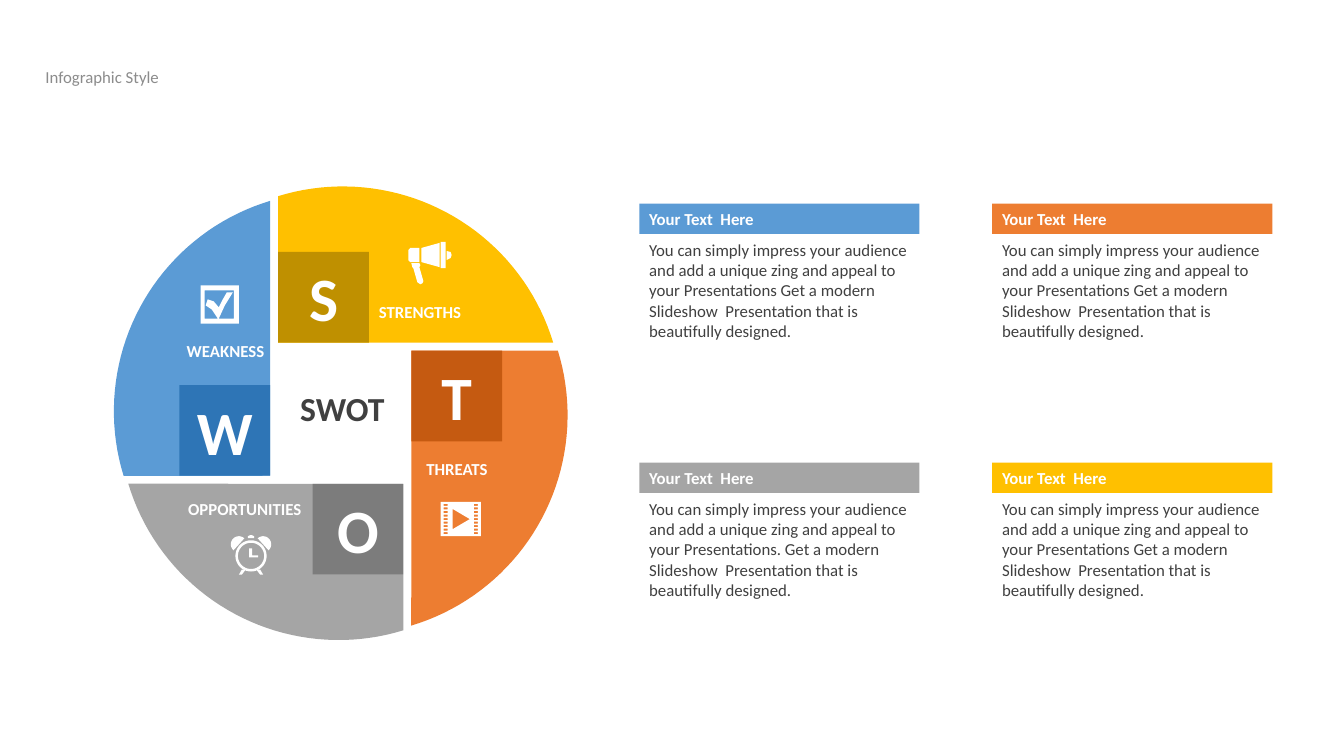
import math
from pptx import Presentation
from pptx import util as u
from pptx.dml.color import RGBColor
from pptx.enum import shapes, text

PX = 9144
FONT = "Calibri"
WHITE = RGBColor(0xFF, 0xFF, 0xFF)
INK = RGBColor(0x40, 0x40, 0x40)
MUTED = RGBColor(0x8C, 0x8C, 0x8C)
BLUE = RGBColor(0x5B, 0x9B, 0xD5)
ORANGE = RGBColor(0xED, 0x7D, 0x31)
GRAY = RGBColor(0xA5, 0xA5, 0xA5)
GOLD = RGBColor(0xFF, 0xC0, 0x00)
DARK_BLUE = RGBColor(0x2E, 0x75, 0xB6)
DARK_ORANGE = RGBColor(0xC5, 0x5A, 0x11)
DARK_GRAY = RGBColor(0x7C, 0x7C, 0x7C)
DARK_GOLD = RGBColor(0xBF, 0x90, 0x00)
LEFT, CENTER, RIGHT = text.PP_ALIGN.LEFT, text.PP_ALIGN.CENTER, text.PP_ALIGN.RIGHT
TOP, MIDDLE = text.MSO_ANCHOR.TOP, text.MSO_ANCHOR.MIDDLE


def px(value):
    return u.Emu(round(value * PX))


def write(shape, words, size, color, bold=False, align=LEFT, anchor=TOP):
    frame = shape.text_frame
    frame.word_wrap = True
    frame.auto_size = text.MSO_AUTO_SIZE.NONE
    frame.vertical_anchor = anchor
    paragraph = frame.paragraphs[0]
    paragraph.alignment = align
    run = paragraph.add_run()
    run.text = words
    run.font.name = FONT
    run.font.size = u.Pt(size)
    run.font.bold = bold
    run.font.color.rgb = color


def label(slide, box, words, size, color, **style):
    write(slide.shapes.add_textbox(*map(px, box)), words, size, color, **style)


def paint(shape, color):
    shape.shadow.inherit = False
    shape.fill.solid()
    shape.fill.fore_color.rgb = color
    shape.line.fill.background()


def block(slide, box, color):
    shape = slide.shapes.add_shape(shapes.MSO_SHAPE.RECTANGLE, *map(px, box))
    paint(shape, color)
    return shape


def outline(slide, left, top, contours, color):
    placed = [[(px(left + x), px(top + y)) for x, y in points] for points in contours]
    builder = slide.shapes.build_freeform(*placed[0][0])
    builder.add_line_segments(placed[0][1:])
    for points in placed[1:]:
        builder.move_to(*points[0])
        builder.add_line_segments(points[1:])
    paint(builder.convert_to_shape(), color)


def arc(cx, cy, radius, start, end, steps=40):
    angles = [math.radians(start + (end - start) * i / steps) for i in range(steps + 1)]
    return [(cx + radius * math.cos(a), cy + radius * math.sin(a)) for a in angles]


def rect(x, y, width, height):
    return [(x, y), (x + width, y), (x + width, y + height), (x, y + height)]


def turn(point, quarters):
    x, y = point
    for _ in range(quarters):
        x, y = -y, x
    return x, y


def megaphone(slide, left, top):
    handle = [(3, 21), (11, 21), (12, 23), (11, 25), (15, 39), (14, 41),
              (12, 42), (9, 40), (5, 26), (4, 25)]
    grip = [(2, 6), (11, 6), (11, 20), (2, 20), (0, 18), (0, 8)]
    cone = [(31, 1), (31, 25), (13, 20), (13, 6)]
    knob = [(38, 9), (42, 10), (43, 13), (42, 16), (38, 18)]
    outline(slide, left, top, [handle, grip, cone, rect(32, 0, 5, 26), knob], WHITE)


def film(slide, left, top):
    holes = [rect(x, 2 + 3.5 * row, 4, 2) for row in range(9) for x in (3, 33)]
    play = [(12, 7), (12, 27), (29, 17)]
    outline(slide, left, top, [rect(0, 0, 40, 34), play, *holes], WHITE)


def alarm_clock(slide, left, top):
    rim, face = arc(20, 20.5, 15.5, 0, 360), arc(20, 20.5, 13, 0, 360)
    hands = [(18, 13), (21, 13), (21, 20), (27, 20), (27, 22), (18, 22)]
    button = [(17, 3), (17, 1), (19, 0), (21, 0), (23, 1), (23, 3)]
    sides = [arc(8, 9, 8, 132, 312), [(11, 34), (14, 35), (11, 39), (8, 39)]]
    mirrored = [[(40 - x, y) for x, y in points] for points in sides]
    outline(slide, left, top, [rim, face, hands, button, *sides, *mirrored], WHITE)


def checkbox(slide, left, top):
    tick = [(5, 20), (7, 14), (13, 16), (18, 22), (22, 14), (26, 7), (32, 7),
            (24, 20), (18, 33), (17, 33), (11, 24)]
    outline(slide, left, top, [rect(0, 0, 38, 38), rect(4, 5, 29, 28), tick], WHITE)


def heading(slide, left, top, width, height):
    title = slide.shapes.title
    title.left, title.top, title.width, title.height = map(px, (left, top, width, height))
    write(title, "Infographic Style", 12, MUTED, anchor=MIDDLE)


def swot_wheel(slide, left, top, size):
    cx, cy = left + size / 2, top + size / 2
    tile = 90
    corner = (-62, -70)
    start = math.degrees(math.atan2(-208, -64))
    end = math.degrees(math.atan2(-63, 209))
    sector = [corner, *arc(2, -7, 218, start, end)]
    tile_center = (corner[0] + tile / 2, corner[1] - tile / 2)
    quadrants = [
        ("S", "STRENGTHS", GOLD, DARK_GOLD, (28, -116), LEFT, megaphone, (67, -170)),
        ("T", "THREATS", ORANGE, DARK_ORANGE, (75, 40), LEFT, film, (99, 88)),
        ("O", "OPPORTUNITIES", GRAY, DARK_GRAY, (-199, 80), RIGHT, alarm_clock, (-109, 121)),
        ("W", "WEAKNESS", BLUE, DARK_BLUE, (-236, -77), RIGHT, checkbox, (-139, -127)),
    ]
    for quarters, (letter, name, color, dark, label_at, align, icon, icon_at) in enumerate(quadrants):
        outline(slide, cx, cy, [[turn(point, quarters) for point in sector]], color)
        dx, dy = turn(tile_center, quarters)
        letter_tile = block(slide, (cx + dx - tile / 2, cy + dy - tile / 2, tile, tile), dark)
        write(letter_tile, letter, 44, WHITE, bold=True, align=CENTER, anchor=MIDDLE)
        label(slide, (cx + label_at[0], cy + label_at[1], 170, 30), name, 12, WHITE,
              bold=True, align=align)
        icon(slide, cx + icon_at[0], cy + icon_at[1])
    label(slide, (cx - 63, cy - 30, 129, 50), "SWOT", 24, INK, bold=True, align=CENTER)


def text_panels(slide, left, top, column_step, row_step):
    width, bar = 278, 30
    colors = [BLUE, ORANGE, GRAY, GOLD]
    for i, color in enumerate(colors):
        x, y = left + i % 2 * column_step, top + i // 2 * row_step
        stop = "." if color == GRAY else ""
        write(block(slide, (x, y, width, bar), color), "Your Text  Here", 12, WHITE,
              bold=True, anchor=MIDDLE)
        label(slide, (x, y + bar + 1, width, 131),
              "You can simply impress your audience and add a unique zing and appeal to "
              f"your Presentations{stop} Get a modern Slideshow  Presentation that is "
              "beautifully designed.", 12, INK)


def main():
    deck = Presentation()
    deck.slide_width, deck.slide_height = px(1333), px(750)
    slide = deck.slides.add_slide(deck.slide_layouts[5])
    heading(slide, 35, 37, 1266, 79)
    swot_wheel(slide, 113, 185, 450)
    text_panels(slide, 634, 202, 350, 257)
    deck.save("out.pptx")


if __name__ == "__main__":
    main()
